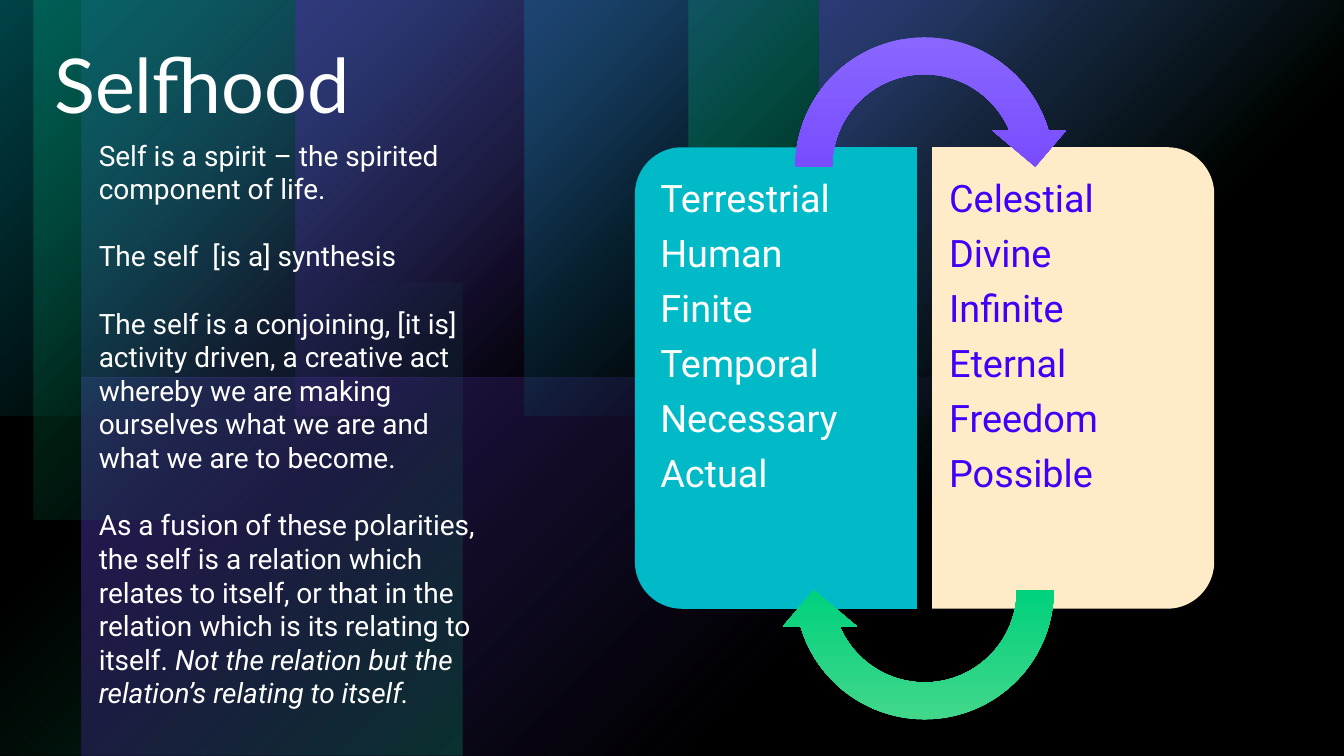
from lxml import etree
from pptx import Presentation
from pptx.dml.color import RGBColor
from pptx.enum.shapes import MSO_SHAPE as Preset
from pptx.enum.text import MSO_ANCHOR as Anchor, MSO_AUTO_SIZE as AutoSize
from pptx.oxml.ns import qn
from pptx.util import Cm, Pt

BLACK = RGBColor(0x00, 0x00, 0x00)
WHITE = RGBColor(0xFF, 0xFF, 0xFF)
GREEN = RGBColor(0x00, 0xD1, 0x7D)
LIGHT_GREEN = RGBColor(0x4B, 0xD8, 0x8C)
DARK_GREEN = RGBColor(0x00, 0xBA, 0x6F)
VIOLET = RGBColor(0x79, 0x4D, 0xFF)
LIGHT_VIOLET = RGBColor(0x8B, 0x6A, 0xFF)
DARK_VIOLET = RGBColor(0x6A, 0x42, 0xE5)
TEAL = RGBColor(0x00, 0xBA, 0xC8)
CREAM = RGBColor(0xFF, 0xEB, 0xC7)
INDIGO = RGBColor(0x3E, 0x00, 0xF9)

WIDTH, HEIGHT = 33.87, 19.05
TERRESTRIAL = ["Terrestrial", "Human", "Finite", "Temporal", "Necessary", "Actual"]
CELESTIAL = ["Celestial", "Divine", "Infinite", "Eternal", "Freedom", "Possible"]
STATEMENTS = [
    ["Self is a spirit – the spirited component of life."],
    ["The self  [is a] synthesis"],
    ["The self is a conjoining, [it is] activity driven, a creative act whereby "
     "we are making ourselves what we are and what we are to become."],
    ["As a fusion of these polarities, the self is a relation which relates to "
     "itself, or that in the relation which is its relating to itself. ",
     "Not the relation but the relation’s relating to itself."],
]


def add_plain_shape(slide, preset, box, rotation=0, flip=""):
    """Add a lineless shape that covers the box once it is rotated."""
    left, top, width, height = box
    if rotation in (90, 270):
        left, top = left + (width - height) / 2, top + (height - width) / 2
        width, height = height, width
    shape = slide.shapes.add_shape(preset, Cm(left), Cm(top), Cm(width), Cm(height))
    shape.shadow.inherit = False
    shape.line.fill.background()
    shape.rotation = rotation
    for axis in flip:
        shape._element.spPr.xfrm.set("flip" + axis, "1")
    return shape


def set_alpha(color, percent):
    etree.SubElement(color, qn("a:alpha"), val=str(percent * 1000))


def fill_gradient(shape, stops, corner=None):
    """Fill with (position, color, alpha) stops, downwards or out of a corner."""
    shape.fill.gradient()
    gradient = shape._element.spPr.find(qn("a:gradFill"))
    for child in list(gradient):
        gradient.remove(child)
    stop_list = etree.SubElement(gradient, qn("a:gsLst"))
    for position, color, alpha in stops:
        stop = etree.SubElement(stop_list, qn("a:gs"), pos=str(position * 1000))
        set_alpha(etree.SubElement(stop, qn("a:srgbClr"), val=str(color)), alpha)
    if corner is None:
        etree.SubElement(gradient, qn("a:lin"), ang="5400000", scaled="0")
    else:
        circle = etree.SubElement(gradient, qn("a:path"), path="circle")
        etree.SubElement(circle, qn("a:fillToRect"),
                         {side: "100000" for side in corner})


def add_text_box(slide, box, margins=(0.25, 0.13, 0.25, 0.13)):
    text_box = slide.shapes.add_textbox(*(Cm(length) for length in box))
    frame = text_box.text_frame
    frame.word_wrap = True
    (frame.margin_left, frame.margin_top,
     frame.margin_right, frame.margin_bottom) = (Cm(margin) for margin in margins)
    return frame


def style_font(paragraph, name, size, color):
    paragraph.font.name = name
    paragraph.font.size = Pt(size)
    paragraph.font.color.rgb = color


def add_backdrop(slide, box):
    left, top, width, height = box
    slide.background.fill.solid()
    slide.background.fill.fore_color.rgb = BLACK
    # Glowing panels: offset and size, rotation, flips, color, end of glow, corner
    band, panel, block = (31.8, height / 2), (13.21, 10.46), (16.51, 13.08)
    panels = [
        ((2.06, 0, *band), 90, "H", VIOLET, 60, "rb"),
        ((2.06, height / 2, *band), 90, "", VIOLET, 60, "rb"),
        ((17.35, 0, *block), 270, "H", GREEN, 63, "rb"),
        ((0.84, 0, *block), 270, "HV", GREEN, 63, "rb"),
        ((0, 0, *panel), 0, "H", TEAL, 60, "rb"),
        ((13.21, 0, *panel), 0, "", TEAL, 60, "rb"),
        ((7.44, 0, *panel), 0, "H", VIOLET, 60, "rb"),
        ((20.65, 0, *panel), 0, "", VIOLET, 60, "rb"),
    ]
    corner_glow = add_plain_shape(
        slide, Preset.RECTANGLE, (left, top + 7.11, 11.66, 11.94), flip="H")
    fill_gradient(corner_glow, [(0, GREEN, 40), (34, GREEN, 20), (65, GREEN, 0)], "lt")
    for (x, y, *size), rotation, flip, color, end, corner in panels:
        shape = add_plain_shape(slide, Preset.RECTANGLE,
                                (left + x, top + y, *size), rotation, flip)
        fill_gradient(shape, [(0, color, 60), (end, color, 0)], corner)
    # Dark veil
    veil = add_plain_shape(slide, Preset.RECTANGLE, (left, top, width, height))
    veil.fill.solid()
    veil.fill.fore_color.rgb = BLACK
    set_alpha(veil._element.spPr.find(qn("a:solidFill"))[0], 40)


def add_title(slide, box):
    frame = add_text_box(slide, box)
    frame.vertical_anchor = Anchor.MIDDLE
    paragraph = frame.paragraphs[0]
    paragraph.text = "Selfhood"
    paragraph.line_spacing = 0.9
    style_font(paragraph, "Lato", 54, WHITE)


def add_card(slide, box, rotation, color):
    card = add_plain_shape(slide, Preset.ROUND_2_SAME_RECTANGLE, box, rotation)
    card.adjustments[0] = 0.167
    card.fill.solid()
    card.fill.fore_color.rgb = color


def add_words(slide, box, margins, words, color):
    frame = add_text_box(slide, box, margins)
    for index, word in enumerate(words):
        paragraph = frame.add_paragraph() if index else frame.paragraphs[0]
        paragraph.text = word
        paragraph.line_spacing = 0.9
        paragraph.space_after = Pt(10)
        style_font(paragraph, "Roboto", 27, color)


def add_cycle_arrow(slide, box, rotation, colors):
    arrow = add_plain_shape(slide, Preset.CIRCULAR_ARROW, box, rotation)
    for index, value in enumerate((0.125, 11.423, 204.577, 108, 0.125)):
        arrow.adjustments[index] = value
    fill_gradient(arrow, [(position, color, 100)
                          for position, color in zip((0, 50, 100), colors)])


def add_polarities(slide, box):
    left, top, width, height = box
    card_width, ring = 7.11, 7.44
    right = left + width - card_width
    # Cards with their words
    add_card(slide, (left, top, card_width, height), 270, TEAL)
    add_words(slide, (left + 0.36, top + 0.35, 6.76, 10.95),
              (0.28, 0.48, 0.43, 0.48), TERRESTRIAL, WHITE)
    add_card(slide, (right, top, card_width, height), 90, CREAM)
    add_words(slide, (right, top + 0.35, 6.76, 10.95),
              (0.43, 0.48, 0.28, 0.48), CELESTIAL, INDIGO)
    # Arrows from one card to the other
    ring_left = left + (width - ring) / 2
    add_cycle_arrow(slide, (ring_left, top - 3.23, ring, ring), 0,
                    (LIGHT_VIOLET, VIOLET, DARK_VIOLET))
    add_cycle_arrow(slide, (ring_left, top + 7.44, ring, ring), 180,
                    (LIGHT_GREEN, GREEN, DARK_GREEN))


def add_statements(slide, box):
    frame = add_text_box(slide, box)
    frame.auto_size = AutoSize.SHAPE_TO_FIT_TEXT
    for index, (plain, *emphasis) in enumerate(STATEMENTS):
        paragraph = frame.add_paragraph() if index else frame.paragraphs[0]
        paragraph.add_run().text = plain
        for text in emphasis:
            run = paragraph.add_run()
            run.text = text
            run.font.italic = True
        paragraph.space_before = Pt(24 if index else 0)
        style_font(paragraph, "Roboto", 20, WHITE)


def main():
    presentation = Presentation()
    presentation.slide_width, presentation.slide_height = Cm(WIDTH), Cm(HEIGHT)
    slide = presentation.slides.add_slide(presentation.slide_layouts[6])
    add_backdrop(slide, (0, 0, WIDTH, HEIGHT))
    add_title(slide, (1.12, 0.81, 13.31, 2.87))
    add_polarities(slide, (16, 3.71, 14.6, 11.63))
    add_statements(slide, (2.24, 3.35, 10.26, 17.27))
    presentation.save("out.pptx")


if __name__ == "__main__":
    main()
